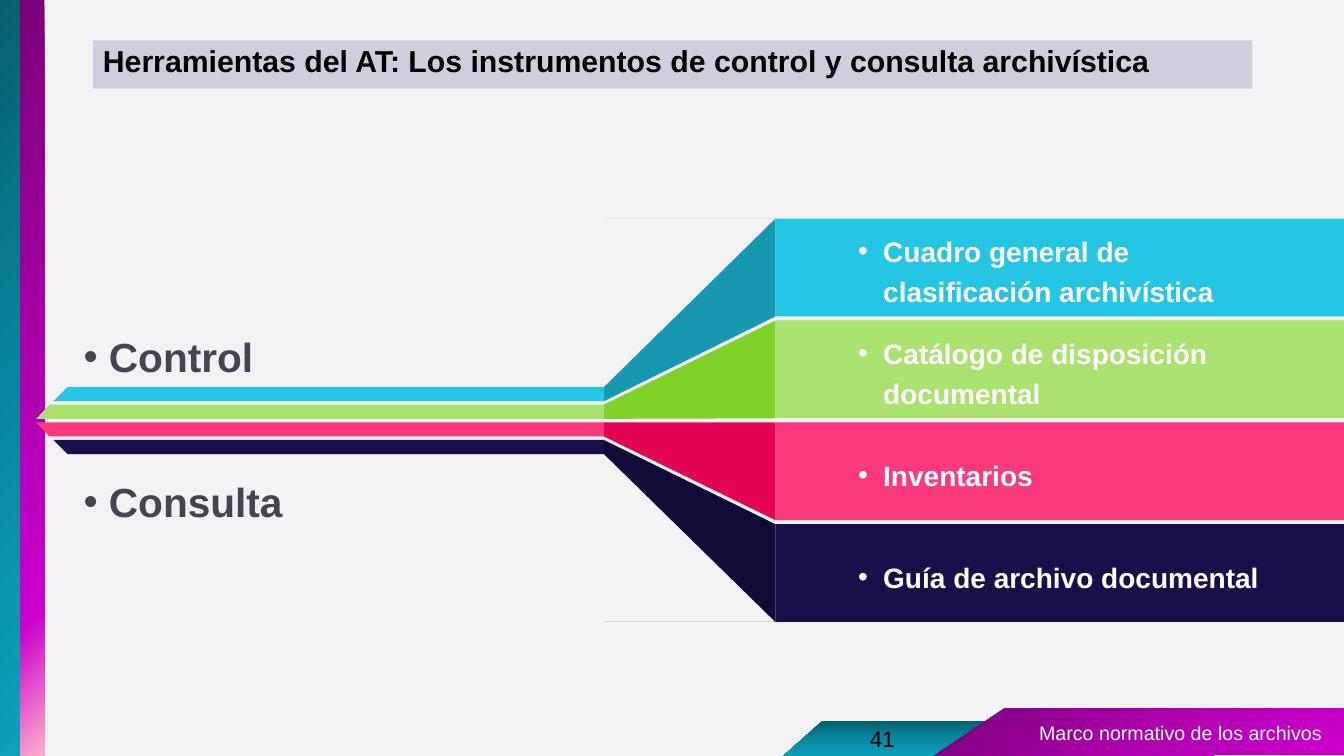
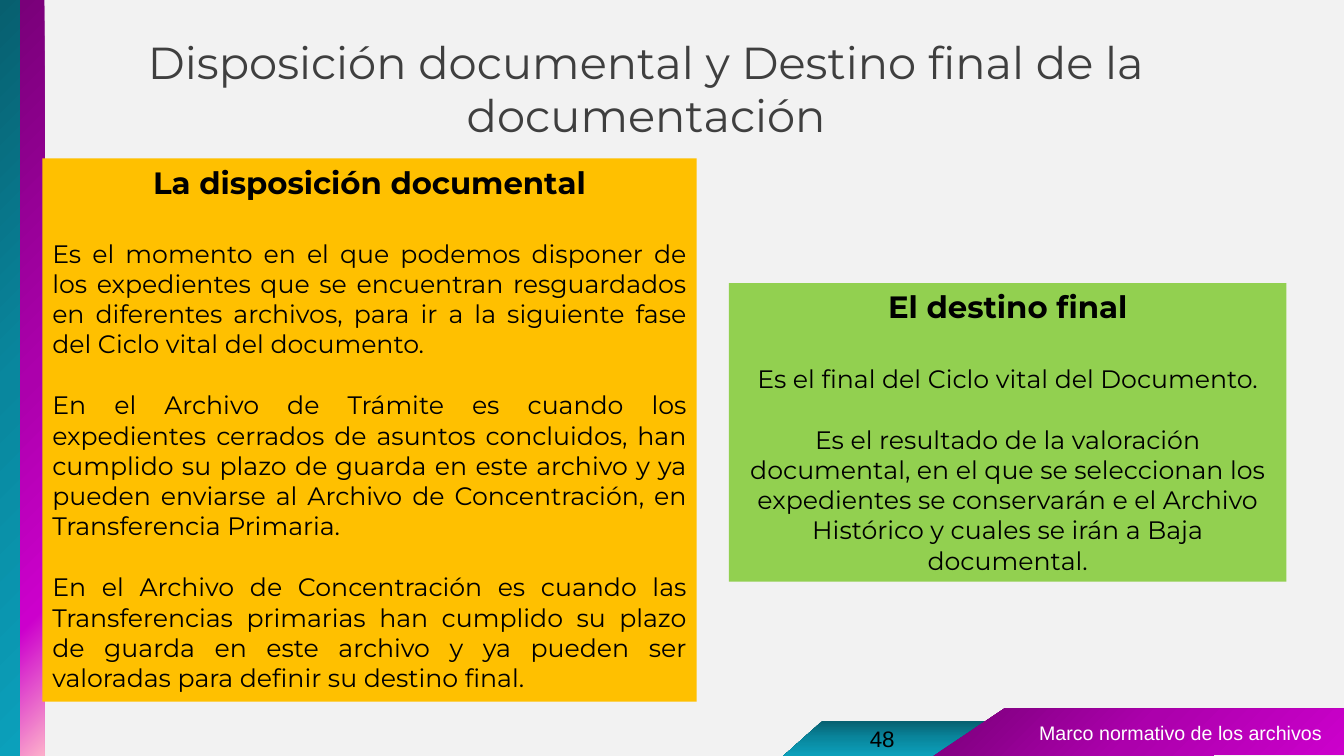
from lxml import etree
from pptx import Presentation
from pptx.dml.color import RGBColor
from pptx.enum import shapes as kinds, text as txt
from pptx.oxml.ns import qn
from pptx.util import Inches, Pt

KIND = kinds.MSO_SHAPE
ALIGN = txt.PP_ALIGN
ANCHOR = txt.MSO_ANCHOR

BACK = "F2F2F2"
TEAL = [(0, "075F6F"), (50, "09879E"), (100, "0BA0BB")]
PURPLE = [(0, "790079"), (50, "AC00AC"), (100, "CC00CC")]
BLUSH = [(0, "790079"), (50, "AC00AC"), (81, "CC00CC"), (100, "FDB0CB")]
FOOTER = "Marco normativo de los archivos"
RIBBON = [(9.96, 7.03), (13.33, 7.03), (13.33, 7.49), (12.04, 7.49),
          (12.03, 7.5), (9.26, 7.5)]

TOOLS = "Herramientas del AT: Los instrumentos de control y consulta archivística"
# text, band colour, fan colour, left end of the stripe at top and bottom
BANDS = [
    ("Cuadro general de clasificación archivística", "25C6E3", "1798AF", 0.67, 0.53),
    ("Catálogo de disposición documental", "A9E26F", "7FD22A", 0.49, 0.36),
    ("Inventarios", "FB3A7E", "E30553", 0.36, 0.49),
    ("Guía de archivo documental", "1A0F49", "130B37", 0.53, 0.67),
]
USES = [
    ("Control", (0.76, 2.2, 4.99, 1.61), ANCHOR.BOTTOM, 1.0),
    ("Consulta", (0.76, 4.61, 4.99, 1.86), ANCHOR.TOP, 1.2),
]

FATE = "Disposición documental y Destino final de la documentación"
CARDS = [
    ("La disposición documental", (0.42, 1.57, 6.49, 5.39), "FFC000", ALIGN.JUSTIFY, [
        "Es el momento en el que podemos disponer de los expedientes que se "
        "encuentran resguardados en diferentes archivos, para ir a la siguiente "
        "fase del Ciclo vital del documento.",
        "En el Archivo de Trámite es cuando los expedientes cerrados de asuntos "
        "concluidos, han cumplido su plazo de guarda en este archivo y ya pueden "
        "enviarse al Archivo de Concentración, en Transferencia Primaria.",
        "En el Archivo de Concentración es cuando las Transferencias primarias "
        "han cumplido su plazo de guarda en este archivo y ya pueden ser "
        "valoradas para definir su destino final."]),
    ("El destino final", (7.23, 2.81, 5.53, 2.96), "92D050", ALIGN.CENTER, [
        "Es el final del Ciclo vital del Documento.",
        "Es el resultado de la valoración documental, en el que se seleccionan "
        "los expedientes se conservarán e el Archivo Histórico y cuales se irán "
        "a Baja documental."]),
]


def color(code):
    return RGBColor.from_string(code)


def paint(shape, code):
    shape.shadow.inherit = False
    shape.line.fill.background()
    shape.fill.solid()
    shape.fill.fore_color.rgb = color(code)


def blend(shape, stops, angle):
    """Fill with a linear gradient; the angle runs clockwise in degrees."""
    paint(shape, stops[0][1])
    shape.fill.gradient()
    shape.fill.gradient_angle = 360 - angle
    held = next(shape._element.iter(qn("a:gsLst")))
    for old in list(held):
        held.remove(old)
    for place, code in stops:
        stop = etree.SubElement(held, qn("a:gs"), pos=str(place * 1000))
        etree.SubElement(stop, qn("a:srgbClr"), val=code)


def block(slide, kind, at):
    return slide.shapes.add_shape(kind, *map(Inches, at))


def outline(slide, points):
    first, *rest = [tuple(map(Inches, point)) for point in points]
    maker = slide.shapes.build_freeform(*first)
    maker.add_line_segments(rest, close=True)
    return maker.convert_to_shape()


def setup(frame, anchor, pad=(0.1, 0.05)):
    frame.word_wrap = True
    frame.auto_size = txt.MSO_AUTO_SIZE.NONE
    frame.vertical_anchor = anchor
    frame.margin_left = frame.margin_right = Inches(pad[0])
    frame.margin_top = frame.margin_bottom = Inches(pad[1])


def write(para, words, size, code, face="Arial", bold=False,
          align=ALIGN.LEFT, lead=1.0):
    para.alignment = align
    para.line_spacing = lead
    run = para.add_run()
    run.text = words
    font = run.font
    font.name, font.size, font.bold = face, Pt(size), bold
    font.color.rgb = color(code)


def label(slide, at, words, size, code, **style):
    box = slide.shapes.add_textbox(*map(Inches, at))
    setup(box.text_frame, ANCHOR.TOP)
    write(box.text_frame.paragraphs[0], words, size, code, **style)


def bullet(slide, at, words, size, code, anchor, lead):
    frame = slide.shapes.add_textbox(*map(Inches, at)).text_frame
    setup(frame, anchor, (0.07, 0.03))
    para = frame.paragraphs[0]
    props = para._p.get_or_add_pPr()
    props.set("marL", str(Inches(0.25)))
    props.set("indent", str(Inches(-0.25)))
    etree.SubElement(props, qn("a:buFont"), typeface="Arial")
    etree.SubElement(props, qn("a:buChar"), char="•")
    write(para, words, size, code, bold=True, lead=lead)


def start(deck, number):
    """Add a slide with the side strips and the footer."""
    slide = deck.slides.add_slide(deck.slide_layouts[5])
    slide.background.fill.solid()
    slide.background.fill.fore_color.rgb = color(BACK)
    blend(block(slide, KIND.RECTANGLE, (0, 0, 0.2, 7.5)), TEAL, 45)
    tab = block(slide, KIND.PARALLELOGRAM, (7.77, 7.15, 2.6, 0.35))
    tab.adjustments[0] = 1.11
    blend(tab, TEAL, 90)
    blend(outline(slide, RIBBON), PURPLE, 45)
    label(slide, (10.11, 7.1, 3.2, 0.34), FOOTER, 14, "FFFFFF", align=ALIGN.CENTER)
    blend(block(slide, KIND.RECTANGLE, (0.2, 0, 0.24, 7.5)), BLUSH, 45)
    label(slide, (7.25, 7.14, 3, 0.36), number, 16, "000000", align=ALIGN.CENTER)
    return slide


def head(slide, at, words, size, code, anchor, **style):
    title = slide.shapes.title
    title.left, title.top, title.width, title.height = map(Inches, at)
    setup(title.text_frame, anchor)
    write(title.text_frame.paragraphs[0], words, size, code, **style)
    return title


def tools(deck):
    slide = start(deck, "41")
    bar = head(slide, (0.92, 0.4, 11.5, 0.48), TOOLS, 21.6, "000000",
               ANCHOR.MIDDLE, bold=True, lead=0.7)
    bar.fill.solid()
    bar.fill.fore_color.rgb = color("CFCFDB")
    near, far = 5.99, 7.69
    for i, (words, light, dark, above, below) in enumerate(BANDS):
        top, thin = 2.17 + 1.01 * i, 3.84 + 0.175 * i
        low, base = top + 0.97, thin + 0.14
        paint(block(slide, KIND.RECTANGLE, (far, top, 5.64, 0.97)), light)
        fan = [(far, top), (far, low), (near, base), (near, thin)]
        if i == len(BANDS) - 1:
            fan = fan[1:] + fan[:1]
        if i in (0, len(BANDS) - 1):  # hairline along the outer edge
            fan += [fan[0], (near, fan[0][1])]
        paint(outline(slide, fan), dark)
        stripe = [(above, thin), (near, thin), (near, base), (below, base)]
        paint(outline(slide, stripe), light)
        bullet(slide, (8.44, top + 0.06, 4.36, 0.86), words, 20, "FFFFFF",
               ANCHOR.MIDDLE, 1.2)
    for words, at, anchor, lead in USES:
        bullet(slide, at, words, 29, "454551", anchor, lead)


def fate(deck):
    slide = start(deck, "48")
    face = "Montserrat"
    head(slide, (0.76, 0.29, 11.3, 1.45), FATE, 32, "3F3F3F", ANCHOR.TOP,
         face=face, align=ALIGN.CENTER)
    for name, at, code, align, parts in CARDS:
        card = block(slide, KIND.RECTANGLE, at)
        paint(card, code)
        frame = card.text_frame
        setup(frame, ANCHOR.TOP)
        write(frame.paragraphs[0], name, 22, "000000", face, True, ALIGN.CENTER)
        for i, words in enumerate(parts):
            para = frame.add_paragraph()
            para.space_before = Pt(22 if i else 27)
            write(para, words, 18, "000000", face, align=align)


def main():
    deck = Presentation()
    deck.slide_width, deck.slide_height = Inches(13.33), Inches(7.5)
    tools(deck)
    fate(deck)
    deck.save("out.pptx")


if __name__ == "__main__":
    main()
